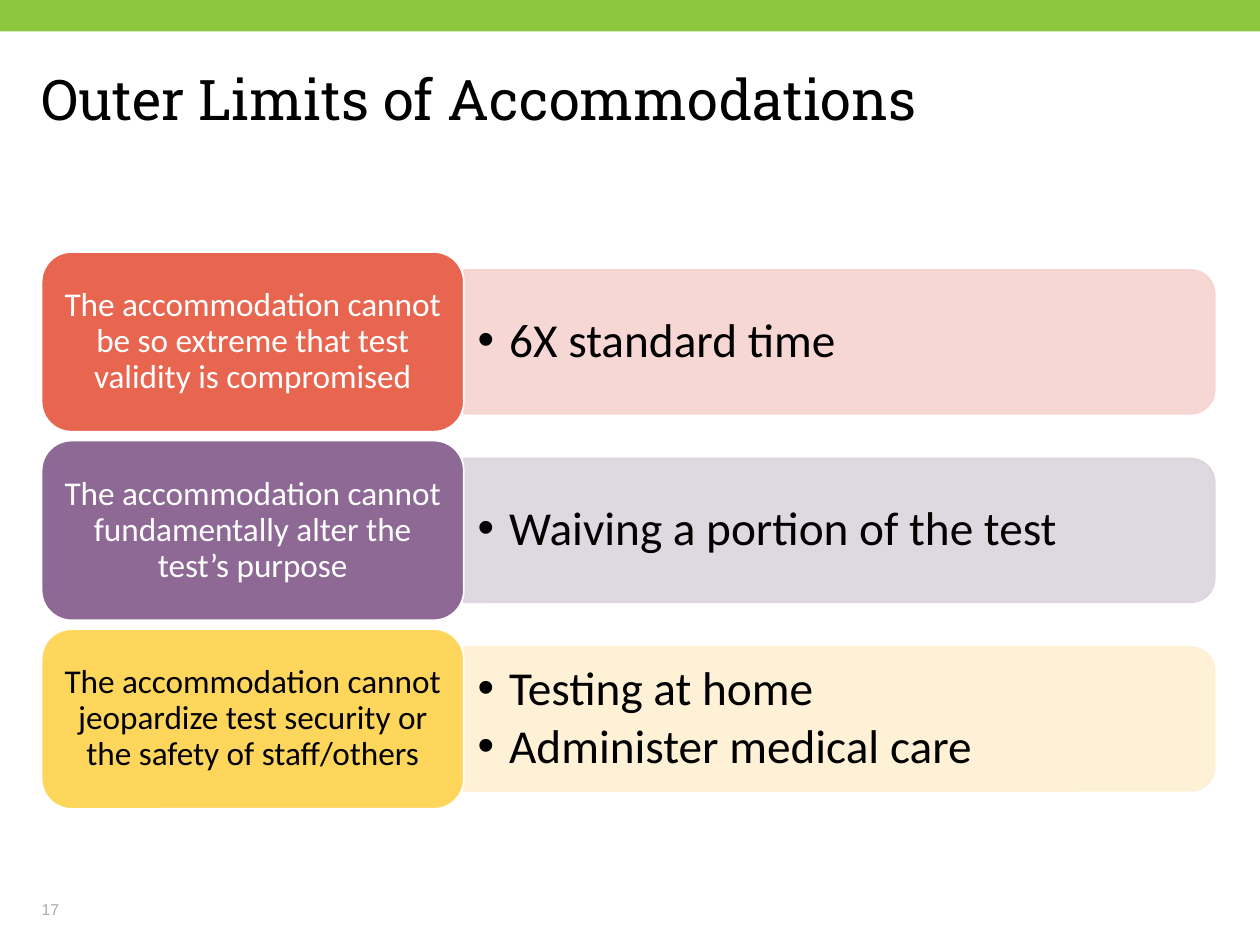
from dataclasses import dataclass

from lxml.etree import SubElement
from pptx import Presentation
from pptx.dml.color import RGBColor
from pptx.enum.shapes import MSO_SHAPE
from pptx.enum.text import MSO_ANCHOR, PP_ALIGN
from pptx.oxml.ns import qn
from pptx.util import Inches, Pt


@dataclass(frozen=True)
class Theme:
    black: str = "000000"
    white: str = "FFFFFF"
    green: str = "8DC63F"
    gray: str = "AFABAB"
    coral: str = "E86650"
    coral_tint: str = "F6D3D0"
    purple: str = "8E6996"
    purple_tint: str = "DBD4DD"
    yellow: str = "FFD65C"
    yellow_tint: str = "FFF0D2"
    title_font: str = "Roboto Slab"
    body_font: str = "Calibri"
    number_font: str = "Arial"
    title_size: int = 32
    bullet_size: int = 27
    label_size: int = 19
    number_size: int = 9


T = Theme()

# Label, its colour, panel tint, label text colour, examples
LIMITS = [
    ("The accommodation cannot be so extreme that test validity is compromised",
     T.coral, T.coral_tint, T.white, ["6X standard time"]),
    ("The accommodation cannot fundamentally alter the test’s purpose",
     T.purple, T.purple_tint, T.white, ["Waiving a portion of the test"]),
    ("The accommodation cannot jeopardize test security or the safety of staff/others",
     T.yellow, T.yellow_tint, T.black, ["Testing at home", "Administer medical care"]),
]


def add_bullet(p, indent=0.25):
    pPr = p._p.get_or_add_pPr()
    pPr.set("marL", str(Inches(indent)))
    pPr.set("indent", str(-Inches(indent)))
    SubElement(pPr, qn("a:buFont"), typeface="Arial")
    SubElement(pPr, qn("a:buChar"), char="•")


def write(tf, lines, *, size, font=T.body_font, color=T.black, align=PP_ALIGN.LEFT,
          anchor=MSO_ANCHOR.MIDDLE, inset=(0, 0), spacing=0.9, after=0, bullet=False):
    tf.word_wrap = True
    tf.vertical_anchor = anchor
    tf.margin_left = tf.margin_right = Inches(inset[0])
    tf.margin_top = tf.margin_bottom = Inches(inset[1])
    for i, line in enumerate(lines):
        p = tf.add_paragraph() if i else tf.paragraphs[0]
        if bullet:
            add_bullet(p)
        p.alignment = align
        p.line_spacing = spacing
        p.space_before = Pt(0)
        p.space_after = Pt(after)
        r = p.add_run()
        r.text = line
        r.font.size = Pt(size)
        r.font.name = font
        r.font.color.rgb = RGBColor.from_string(color)


def add_box(s, kind, x, y, w, h, fill, line=None):
    sp = s.shapes.add_shape(kind, Inches(x), Inches(y), Inches(w), Inches(h))
    sp.shadow.inherit = False
    sp.fill.solid()
    sp.fill.fore_color.rgb = RGBColor.from_string(fill)
    if line:
        sp.line.color.rgb = RGBColor.from_string(line)
        sp.line.width = Pt(1)
    else:
        sp.line.fill.background()
    return sp


def add_textbox(s, x, y, w, h, lines, **fmt):
    box = s.shapes.add_textbox(Inches(x), Inches(y), Inches(w), Inches(h))
    write(box.text_frame, lines, **fmt)


def add_header(s, x, y, w, h, title):
    # Green band across the top, then the title
    add_box(s, MSO_SHAPE.RECTANGLE, 0, 0, 10, 0.25, T.green)
    sp = s.shapes.title
    sp.left, sp.top, sp.width, sp.height = map(Inches, (x, y, w, h))
    write(sp.text_frame, [title], size=T.title_size, font=T.title_font,
          anchor=MSO_ANCHOR.TOP)


def add_panel(s, x, y, w, h, tint, examples):
    # A turned shape keeps its centre, so swap width and height around it
    sp = add_box(s, MSO_SHAPE.ROUND_2_SAME_RECTANGLE,
                 x + (w - h) / 2, y + (h - w) / 2, h, w, tint, tint)
    sp.rotation = 90
    for clr in sp._element.spPr.iter(qn("a:srgbClr")):
        SubElement(clr, qn("a:alpha"), val="90000")
    add_textbox(s, x, y + 0.06, w - 0.06, h - 0.12, examples, size=T.bullet_size,
                inset=(0.11, 0.06), after=4, bullet=True)


def add_limit(s, x, y, w, h, limit):
    label, color, tint, text_color, examples = limit
    label_w = w * 0.36
    # Panel with examples, 80 % of the row height
    add_panel(s, x + label_w, y + h * 0.1, w - label_w, h * 0.8, tint, examples)
    # Label
    sp = add_box(s, MSO_SHAPE.ROUNDED_RECTANGLE, x, y, label_w, h, color, T.white)
    write(sp.text_frame, [label], size=T.label_size, color=text_color,
          align=PP_ALIGN.CENTER, inset=(0.08, 0.04))


def add_limits(s, x, y, w, h, limits, gap=0.07):
    row_h = (h - gap * (len(limits) - 1)) / len(limits)
    for i, limit in enumerate(limits):
        add_limit(s, x, y + i * (row_h + gap), w, row_h, limit)


def main():
    prs = Presentation()
    prs.slide_width, prs.slide_height = Inches(10), Inches(7.5)
    s = prs.slides.add_slide(prs.slide_layouts[5])
    add_header(s, 0.33, 0.57, 9.31, 1.27, "Outer Limits of Accommodations")
    add_limits(s, 0.33, 2, 9.31, 4.42, LIMITS)
    # Slide number
    add_textbox(s, 0.33, 7.05, 2.25, 0.24, ["17"], size=T.number_size,
                font=T.number_font, color=T.gray, anchor=MSO_ANCHOR.BOTTOM, spacing=1.0)
    prs.save("out.pptx")


if __name__ == "__main__":
    main()
